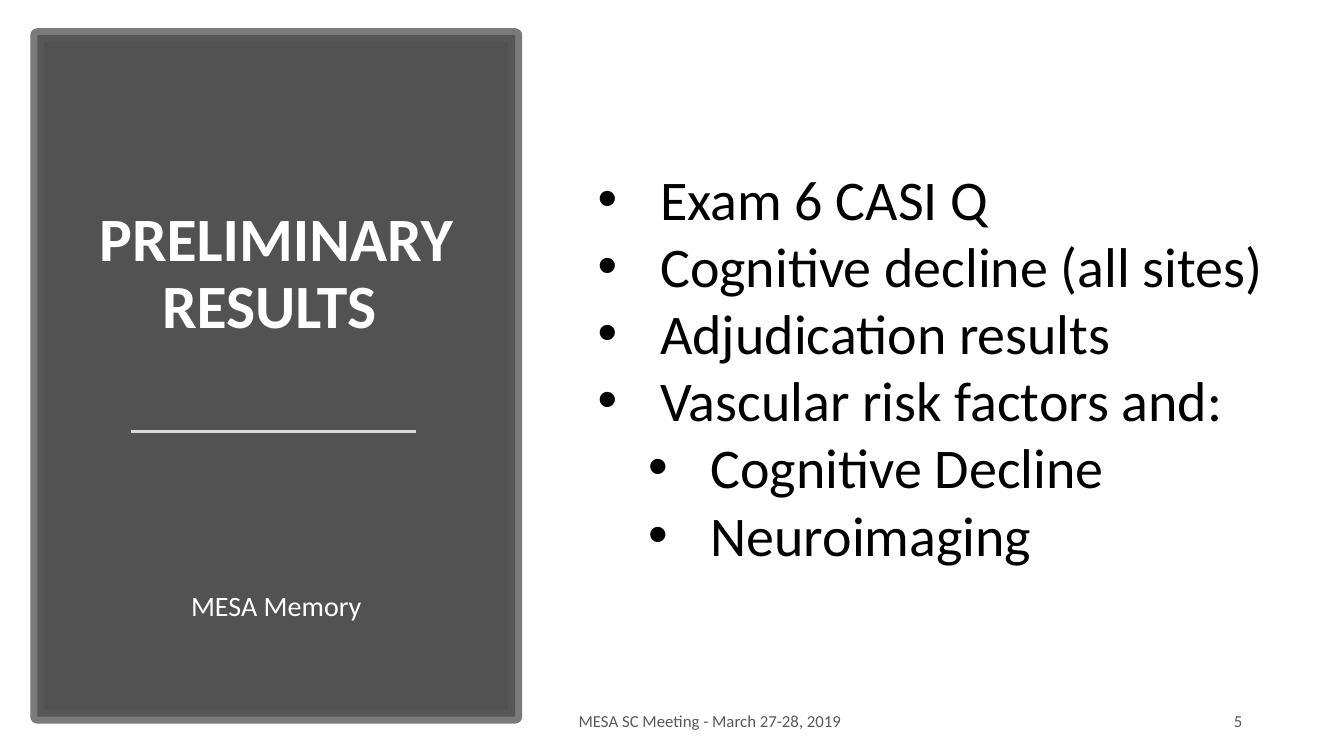
from lxml.etree import SubElement
from pptx import Presentation
from pptx.dml.color import RGBColor
from pptx.enum.shapes import MSO_CONNECTOR, MSO_SHAPE
from pptx.enum.text import MSO_ANCHOR, MSO_AUTO_SIZE, PP_ALIGN
from pptx.oxml.ns import qn
from pptx.util import Inches, Pt

WHITE = RGBColor(0xFF, 0xFF, 0xFF)
BLACK = RGBColor(0x00, 0x00, 0x00)
PANEL_FILL = RGBColor(0x40, 0x40, 0x40)
GREY = RGBColor(0x59, 0x59, 0x59)
RULE = RGBColor(0xD9, 0xD9, 0xD9)

deck = Presentation()
deck.slide_width, deck.slide_height = Inches(13.33), Inches(7.5)
page = deck.slides.add_slide(deck.slide_layouts[5])


def write(box, lines, size, color, bold=False, align=PP_ALIGN.LEFT,
          anchor=MSO_ANCHOR.TOP, spacing=None, after=0, bottom=0.05):
    """Fill a box with one paragraph per line, all in one format."""
    frame = box.text_frame
    frame.word_wrap = True
    frame.auto_size = MSO_AUTO_SIZE.NONE
    frame.vertical_anchor = anchor
    frame.margin_bottom = Inches(bottom)
    frame.text = "\n".join(lines)
    for para in frame.paragraphs:
        para.alignment = align
        para.line_spacing = spacing
        para.space_after = Pt(after)
        for span in para.runs:
            span.font.name = "Calibri"
            span.font.size = Pt(size)
            span.font.bold = bold
            span.font.color.rgb = color
    return frame.paragraphs


def set_opacity(fill, percent):
    color = fill._xPr.find(qn("a:solidFill"))[0]
    SubElement(color, qn("a:alpha")).set("val", str(percent * 1000))


# Dark panel, placed behind the title
panel = page.shapes.add_shape(MSO_SHAPE.RECTANGLE, Inches(0.37), Inches(0.35),
                              Inches(4.74), Inches(6.76))
panel.shadow.inherit = False
panel.fill.solid()
panel.fill.fore_color.rgb = PANEL_FILL
set_opacity(panel.fill, 90)
panel.line.width = Pt(10)
panel.line.color.rgb = GREY
set_opacity(panel.line.fill, 80)
title = page.shapes.title
title.element.addprevious(panel.element)

# Title and subtitle share one column, centred in the panel
column_left, column_width = Inches(0.74), Inches(4)
title.left, title.top = column_left, Inches(1)
title.width, title.height = column_width, Inches(3.16)
write(title, ["PRELIMINARY RESULTS "], 44, WHITE, bold=True, align=PP_ALIGN.CENTER,
      anchor=MSO_ANCHOR.BOTTOM, spacing=0.9, bottom=0.77)
subtitle = page.shapes.add_textbox(column_left, Inches(4.56), column_width, Inches(1.67))
write(subtitle, ["MESA Memory"], 20, WHITE, align=PP_ALIGN.CENTER,
      anchor=MSO_ANCHOR.BOTTOM, spacing=0.9)

# Rule between title and subtitle
rule = page.shapes.add_connector(MSO_CONNECTOR.STRAIGHT, Inches(1.3), Inches(4.28),
                                 Inches(4.13), Inches(4.28))
rule.line.color.rgb = RULE
rule.line.width = Pt(1.75)
SubElement(rule.element.spPr, qn("a:effectLst"))

# Footer and page number
for text, left, width, align in [
    ("MESA SC Meeting - March 27-28, 2019", 5.64, 5.05, PP_ALIGN.LEFT),
    ("5", 10.93, 1.49, PP_ALIGN.RIGHT),
]:
    footer = page.shapes.add_textbox(Inches(left), Inches(6.95), Inches(width), Inches(0.4))
    write(footer, [text], 12, GREY, align=align, anchor=MSO_ANCHOR.MIDDLE, after=6)

# Bulleted topics with their levels
topics = [
    ("Exam 6 CASI Q", 0),
    ("Cognitive decline (all sites)", 0),
    ("Adjudication results", 0),
    ("Vascular risk factors and:", 0),
    ("Cognitive Decline", 1),
    ("Neuroimaging", 1),
]
topic_box = page.shapes.add_textbox(Inches(5.83), Inches(1.58), Inches(7.27), Inches(4.14))
paras = write(topic_box, [text for text, level in topics], 40, BLACK)
for para, (text, level) in zip(paras, topics):
    para.level = level
    properties = para._p.get_or_add_pPr()
    properties.set("marL", str(Inches(0.62 + 0.5 * level)))
    properties.set("indent", str(-Inches(0.62)))
    SubElement(properties, qn("a:buFont")).set("typeface", "Arial")
    SubElement(properties, qn("a:buChar")).set("char", "•")

deck.save("out.pptx")
